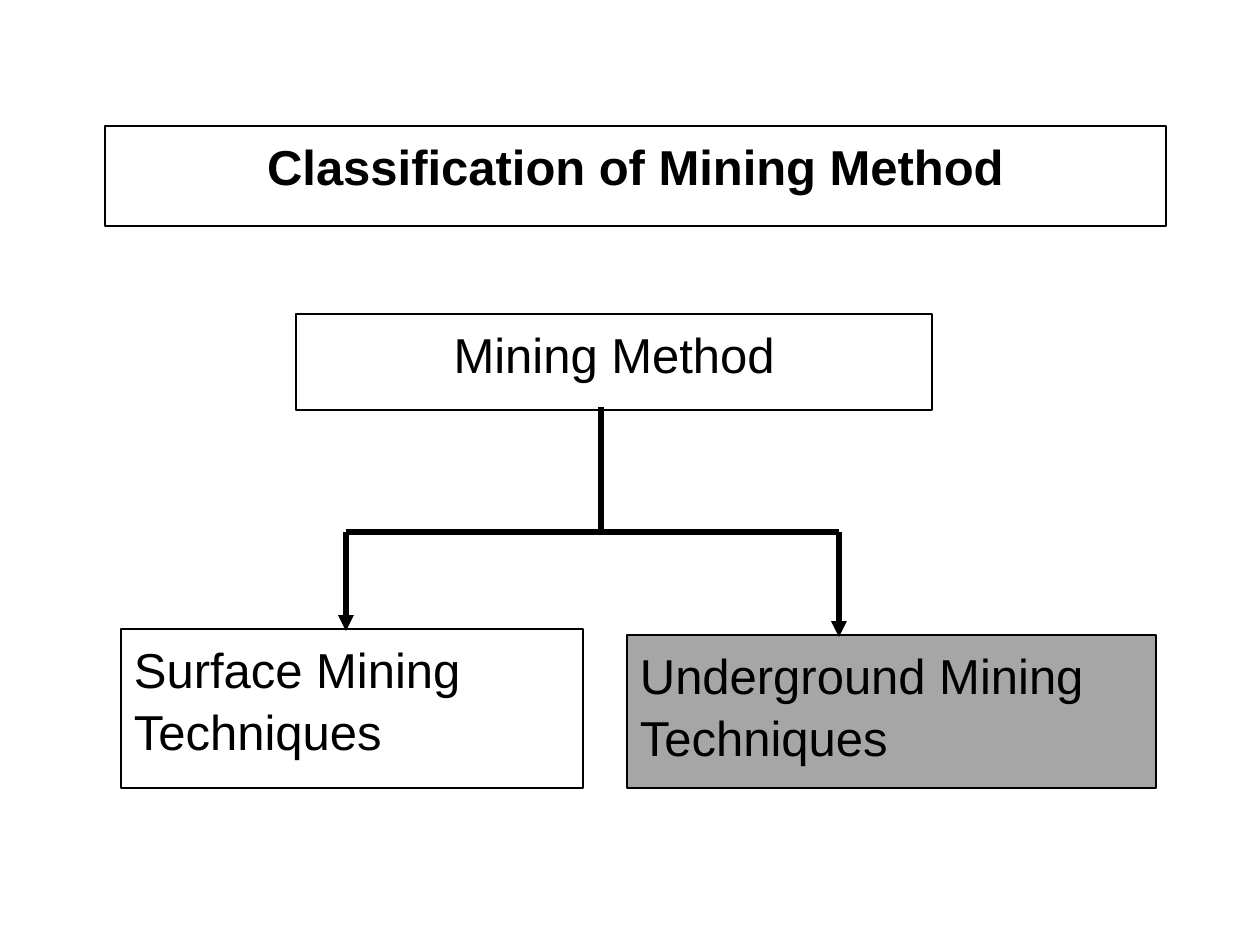
from pptx import Presentation
from pptx.dml.color import RGBColor
from pptx.enum.shapes import MSO_CONNECTOR, MSO_SHAPE
from pptx.enum.text import MSO_ANCHOR, PP_ALIGN
from pptx.oxml.ns import qn
from pptx.util import Emu, Pt
from lxml import etree

RECTANGLE = MSO_SHAPE.RECTANGLE
STRAIGHT = MSO_CONNECTOR.STRAIGHT
TOP = MSO_ANCHOR.TOP
LEFT, CENTER = PP_ALIGN.LEFT, PP_ALIGN.CENTER
EMU_PER_PX = 914400 // 126
BLACK, WHITE, GRAY = "000000", "FFFFFF", "A6A6A6"


def px(length):
    return Emu(length * EMU_PER_PX)


def color(value):
    return RGBColor.from_string(value)


def apply(target, values):
    for name, value in values.items():
        setattr(target, name, value)


class Diagram:
    font = {"name": "Arial", "size": Pt(28)}
    frame = {
        "word_wrap": True, "vertical_anchor": TOP,
        "margin_left": px(13), "margin_right": px(13),
        "margin_top": px(8), "margin_bottom": px(6),
    }
    border, stroke = Pt(0.75), Pt(3)

    def __init__(self, slide):
        self.slide = slide

    def box(self, left, top, width, height, lines, align=LEFT, fill=WHITE, bold=False):
        box = self.slide.shapes.add_shape(
            RECTANGLE, px(left), px(top), px(width), px(height))
        box.shadow.inherit = False
        box.fill.solid()
        box.fill.fore_color.rgb = color(fill)
        box.line.color.rgb = color(BLACK)
        box.line.width = self.border
        apply(box.text_frame, self.frame)
        box.text_frame.text = "\n".join(lines)
        for paragraph in box.text_frame.paragraphs:
            apply(paragraph, {"alignment": align, "line_spacing": 1.05})
            apply(paragraph.font, {**self.font, "bold": bold})
            paragraph.font.color.rgb = color(BLACK)

    def link(self, start, end, arrow=False):
        link = self.slide.shapes.add_connector(
            STRAIGHT, *map(px, start), *map(px, end))
        link.line.color.rgb = color(BLACK)
        link.line.width = self.stroke
        if arrow:
            etree.SubElement(link.line._get_or_add_ln(), qn("a:tailEnd"), type="triangle")
        etree.SubElement(link._element.spPr, qn("a:effectLst"))


def main():
    deck = Presentation()
    deck.slide_width, deck.slide_height = px(1260), px(945)
    diagram = Diagram(deck.slides.add_slide(deck.slide_layouts[6]))

    # Title and root of the tree
    diagram.box(105, 126, 1061, 100, ["Classification of Mining Method"], CENTER, bold=True)
    diagram.box(296, 314, 636, 96, ["Mining Method"], CENTER)

    # Branches
    surface_top, underground_top, bottom = 629, 635, 788
    diagram.box(121, surface_top, 462, bottom - surface_top,
                ["Surface Mining", "Techniques"])
    diagram.box(627, underground_top, 529, bottom - underground_top,
                ["Underground Mining", "Techniques"], fill=GRAY)

    # Arrows down to the branches, joined to the root
    surface_x, underground_x, root_x, fork_y = 346, 839, 601, 532
    for x, top in ((surface_x, surface_top), (underground_x, underground_top)):
        diagram.link((x, fork_y), (x, top + 2), arrow=True)
    diagram.link((surface_x, fork_y), (underground_x, fork_y))
    diagram.link((root_x, 407), (root_x, fork_y))

    deck.save("out.pptx")


if __name__ == "__main__":
    main()
